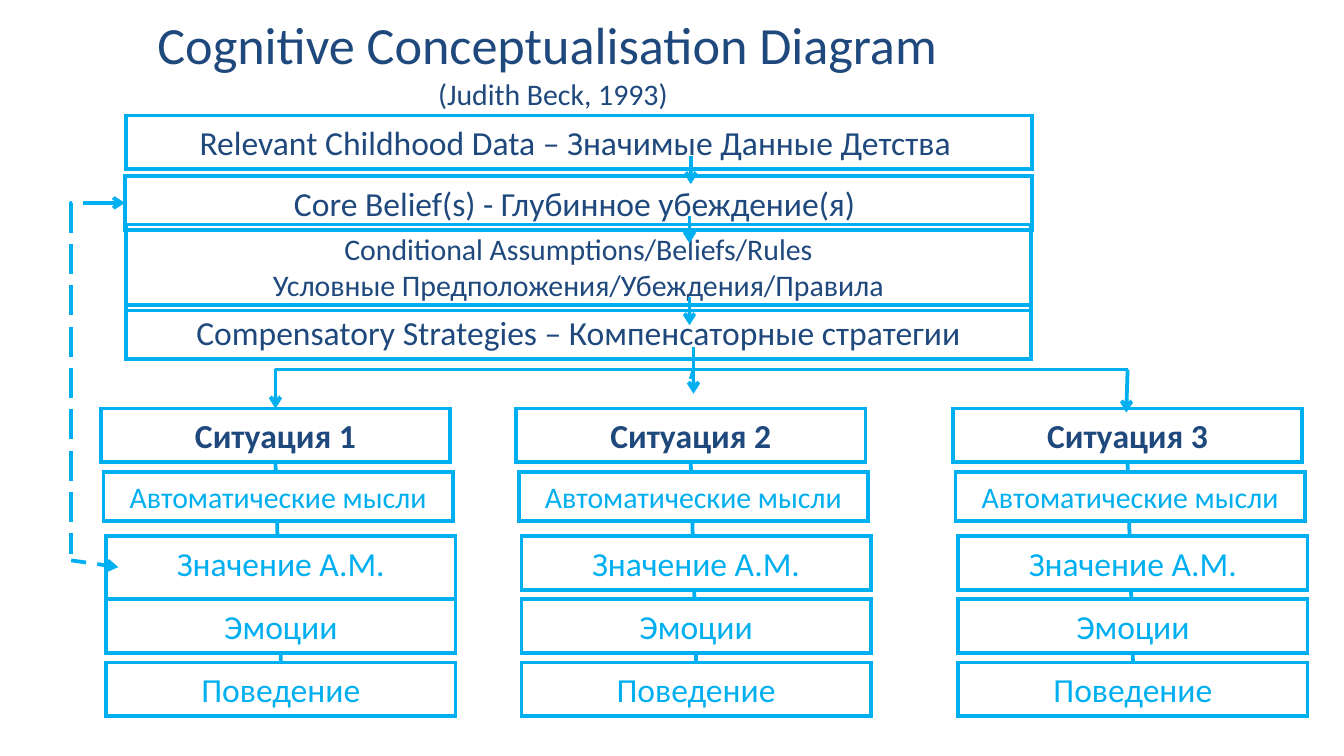
from copy import deepcopy
from dataclasses import dataclass
from typing import Optional

from lxml import etree
from pptx import Presentation
from pptx.dml.color import RGBColor
from pptx.enum.dml import MSO_LINE
from pptx.enum.shapes import MSO_CONNECTOR, MSO_SHAPE
from pptx.enum.text import MSO_ANCHOR, MSO_AUTO_SIZE, PP_ALIGN
from pptx.oxml.ns import qn
from pptx.util import Pt

RECTANGLE = MSO_SHAPE.RECTANGLE
STRAIGHT = MSO_CONNECTOR.STRAIGHT
CENTER = PP_ALIGN.CENTER
TOP, MIDDLE = MSO_ANCHOR.TOP, MSO_ANCHOR.MIDDLE
NO_AUTOFIT = MSO_AUTO_SIZE.NONE
DASH, LONG_DASH = MSO_LINE.DASH, MSO_LINE.LONG_DASH
EMU_PER_PX = 9144  # 100 px to the inch
SLIDE_WIDTH = 1000
TITLE_ONLY = 5


@dataclass(frozen=True)
class Theme:
    font: str = "Calibri"
    navy: RGBColor = RGBColor(0x1F, 0x49, 0x7D)
    cyan: RGBColor = RGBColor(0x00, 0xAF, 0xF0)
    white: RGBColor = RGBColor(0xFF, 0xFF, 0xFF)
    title: int = 28
    body: int = 18
    small: int = 16
    stroke: int = 2


THEME = Theme()


@dataclass(frozen=True)
class Box:
    text: str
    left: int
    top: int
    width: int
    height: int = 40
    size: int = THEME.body
    color: RGBColor = THEME.navy
    bold: bool = False
    filled: bool = False


@dataclass(frozen=True)
class Link:
    x1: int
    y1: int
    x2: int
    y2: int
    arrow: Optional[str] = None  # "headEnd" or "tailEnd"
    dash: Optional[MSO_LINE] = None
    elbow: bool = False  # horizontal first, then vertical


def px(length: int) -> int:
    return length * EMU_PER_PX


def format_run(run, size: int, color: RGBColor, bold: bool = False) -> None:
    run.font.name = THEME.font
    run.font.size = Pt(size)
    run.font.bold = bold
    run.font.color.rgb = color


def draw_box(slide, box: Box) -> None:
    shape = slide.shapes.add_shape(
        RECTANGLE, px(box.left), px(box.top), px(box.width), px(box.height))
    shape.shadow.inherit = False
    if box.filled:
        shape.fill.solid()
        shape.fill.fore_color.rgb = THEME.white
    else:
        shape.fill.background()
    shape.line.color.rgb = THEME.cyan
    shape.line.width = Pt(THEME.stroke)
    outline = shape._element.spPr.find(qn("a:ln"))
    etree.SubElement(outline, qn("a:miter"), lim="800000")
    frame = shape.text_frame
    frame.word_wrap = True
    frame.vertical_anchor = TOP
    frame.text = box.text
    for paragraph in frame.paragraphs:
        paragraph.alignment = CENTER
        for run in paragraph.runs:
            format_run(run, box.size, box.color, box.bold)


def draw_link(slide, link: Link) -> None:
    connector = slide.shapes.add_connector(
        STRAIGHT, px(link.x1), px(link.y1), px(link.x2), px(link.y2))
    connector.line.color.rgb = THEME.cyan
    connector.line.width = Pt(THEME.stroke)
    if link.dash is not None:
        connector.line.dash_style = link.dash
    properties = connector._element.spPr
    if link.elbow:
        properties.find(qn("a:prstGeom")).set("prst", "bentConnector2")
    if link.arrow:
        line = properties.find(qn("a:ln"))
        etree.SubElement(line, qn(f"a:{link.arrow}"), type="arrow")
    etree.SubElement(properties, qn("a:effectLst"))


def draw_title(slide) -> None:
    title = slide.shapes.title
    title.left, title.top, title.width, title.height = 0, px(-1), px(823), px(94)
    frame = title.text_frame
    frame.auto_size = NO_AUTOFIT
    frame.vertical_anchor = MIDDLE
    frame.text = "Cognitive Conceptualisation Diagram \v(Judith Beck, 1993)"
    heading = frame.paragraphs[0]
    heading.alignment = CENTER
    name, author = heading.runs
    format_run(name, THEME.title, THEME.navy)
    format_run(author, THEME.small, THEME.navy)
    # The line break takes the size of the line it ends
    heading._p.find(qn("a:br")).append(deepcopy(name._r.find(qn("a:rPr"))))


def draw_situation(slide, number: int, left: int, meaning_height: int) -> None:
    width = 260
    draw_box(slide, Box(f"Ситуация {number}", left, 304, width, bold=True))
    draw_link(slide, Link(left + 130, 345, left + 134, 493))
    steps = (
        ("Автоматические мысли", 2, 351, 37, THEME.small),
        ("Значение A.М.", 4, 399, meaning_height, THEME.body),
        ("Эмоции", 4, 446, 40, THEME.body),
        ("Поведение", 4, 493, 40, THEME.body),
    )
    for text, shift, top, height, size in steps:
        draw_box(slide, Box(text, left + shift, top, width, height, size,
                            THEME.cyan, filled=True))


BELIEFS = (
    Box("Relevant Childhood Data – Значимые Данные Детства ", 94, 86, 674),
    Box("Core Belief(s) - Глубинное убеждение(я) ", 93, 131, 675),
    Box("Conditional Assumptions/Beliefs/Rules\n"
        "Условные Предположения/Убеждения/Правила",
        94, 167, 673, 64, THEME.small),
    Box("Compensatory Strategies – Компенсаторные стратегии", 94, 227, 673),
)

# Left edge of each situation column and height of its meaning box
SITUATIONS = ((75, 71), (384, 40), (709, 40))

LINKS = (
    # Short joints on the central axis
    Link(514, 133, 516, 133),
    Link(516, 275, 514, 282),
    # Strategies branch out to the situations
    Link(516, 258, 516, 293, "tailEnd"),
    Link(839, 275, 205, 304, "tailEnd", elbow=True),
    Link(839, 275, 838, 307, "tailEnd"),
    # Dashed loop between core beliefs and meaning
    Link(93, 151, 53, 412, "headEnd", LONG_DASH, elbow=True),
    Link(53, 417, 88, 422, "tailEnd", DASH),
    # Steps between belief levels
    Link(514, 116, 514, 137, "tailEnd"),
    Link(513, 161, 513, 181, "tailEnd"),
    Link(513, 221, 513, 242, "tailEnd"),
)


def main() -> None:
    deck = Presentation()
    deck.slide_width = px(SLIDE_WIDTH)
    deck.slide_height = px(SLIDE_WIDTH) * 9 // 16
    slide = deck.slides.add_slide(deck.slide_layouts[TITLE_ONLY])
    draw_title(slide)
    for belief in BELIEFS:
        draw_box(slide, belief)
    for number, (left, meaning_height) in enumerate(SITUATIONS, start=1):
        draw_situation(slide, number, left, meaning_height)
    for link in LINKS:
        draw_link(slide, link)
    deck.save("out.pptx")


if __name__ == "__main__":
    main()
